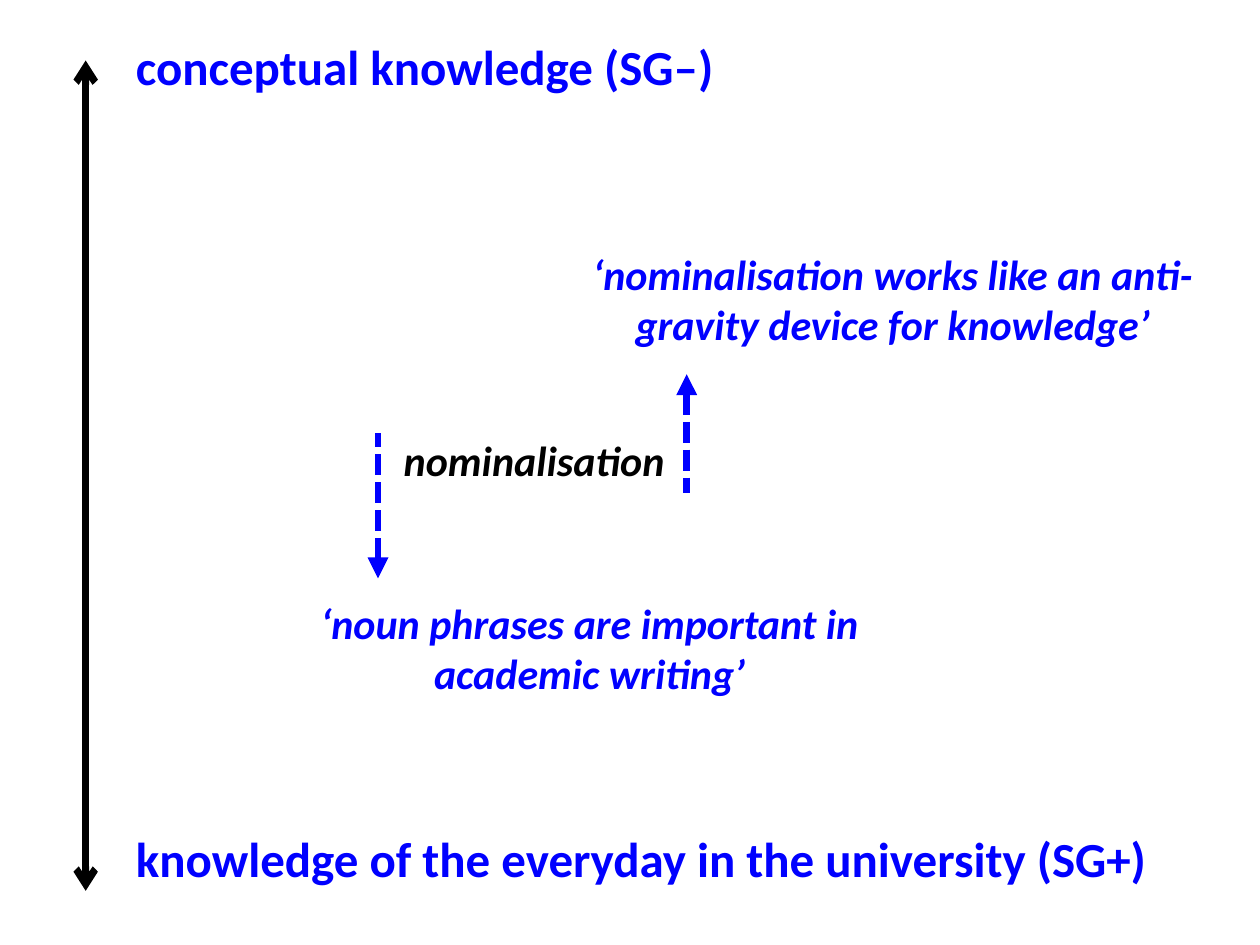
from lxml import etree
from pptx import Presentation
from pptx.dml.color import RGBColor
from pptx.enum.dml import MSO_LINE
from pptx.enum.shapes import MSO_CONNECTOR
from pptx.enum.text import PP_ALIGN
from pptx.oxml.ns import qn
from pptx.util import Inches, Pt

LEFT, CENTER = PP_ALIGN.LEFT, PP_ALIGN.CENTER
STRAIGHT = MSO_CONNECTOR.STRAIGHT
SHORT_DASH = MSO_LINE.SQUARE_DOT  # sysDash is set below for the dashed arrows

THEME = {
    "font": "Calibri",
    "blue": RGBColor(0x00, 0x00, 0xFF),
    "black": RGBColor(0x00, 0x00, 0x00),
    "pole_size": Pt(28),
    "quote_size": Pt(24),
    "arrow_width": Pt(4),
}

deck = Presentation()
deck.slide_width, deck.slide_height = Inches(10), Inches(7.5)
slide = deck.slides.add_slide(deck.slide_layouts[6])

# Grid of 100 columns by 100 rows
COL, ROW = deck.slide_width / 100, deck.slide_height / 100


def add_label(wording, left, top, width, height, size, color, align, italic):
    box = slide.shapes.add_textbox(
        round(left * COL), round(top * ROW), round(width * COL), round(height * ROW))
    box.text_frame.word_wrap = True
    paragraph = box.text_frame.paragraphs[0]
    paragraph.text = wording
    paragraph.alignment = align
    font = paragraph.font
    font.name, font.size, font.color.rgb = THEME["font"], THEME[size], THEME[color]
    font.bold, font.italic = True, italic


def add_vertical_arrow(column, start, end, color, dashed, ends):
    arrow = slide.shapes.add_connector(
        STRAIGHT, round(column * COL), round(start * ROW),
        round(column * COL), round(end * ROW))
    arrow.line.width = THEME["arrow_width"]
    arrow.line.color.rgb = THEME[color]
    outline = arrow.line._get_or_add_ln()
    if dashed:
        arrow.line.dash_style = SHORT_DASH
        outline.find(qn("a:prstDash")).set("val", "sysDash")
    for end_tag, head in ends.items():
        etree.SubElement(outline, qn(f"a:{end_tag}"), type=head)
    etree.SubElement(arrow._element.spPr, qn("a:effectLst"))


# Semantic gravity axis
add_vertical_arrow(6.8, 6.4, 94.27, "black", False,
                   {"headEnd": "arrow", "tailEnd": "arrow"})

# Poles of the axis
for pole, top, width in (
    ("conceptual knowledge (SG–)", 3.2, 72.8),
    ("knowledge of the everyday in the university (SG+)", 87.07, 87.8),
):
    add_label(pole, 9.8, top, width, 10.27, "pole_size", "blue", LEFT, False)

# Concept between the poles and the two quotes about it
for wording, left, top, width, height, color in (
    ("nominalisation", 24.6, 45.33, 35.6, 9.33, "black"),
    ("‘noun phrases are important in academic writing’",
     22.6, 62.53, 48.4, 10.27, "blue"),
    ("‘nominalisation works like an anti-gravity device for knowledge’",
     44.1, 25.6, 53.5, 10.27, "blue"),
):
    add_label(wording, left, top, width, height, "quote_size", color, CENTER, True)

# Moves down and up the axis, each with its head at the first point
for column, tip, foot in ((30, 61.2, 45.87), (54.5, 39.6, 52.13)):
    add_vertical_arrow(column, tip, foot, "blue", True, {"headEnd": "triangle"})

deck.save("out.pptx")
